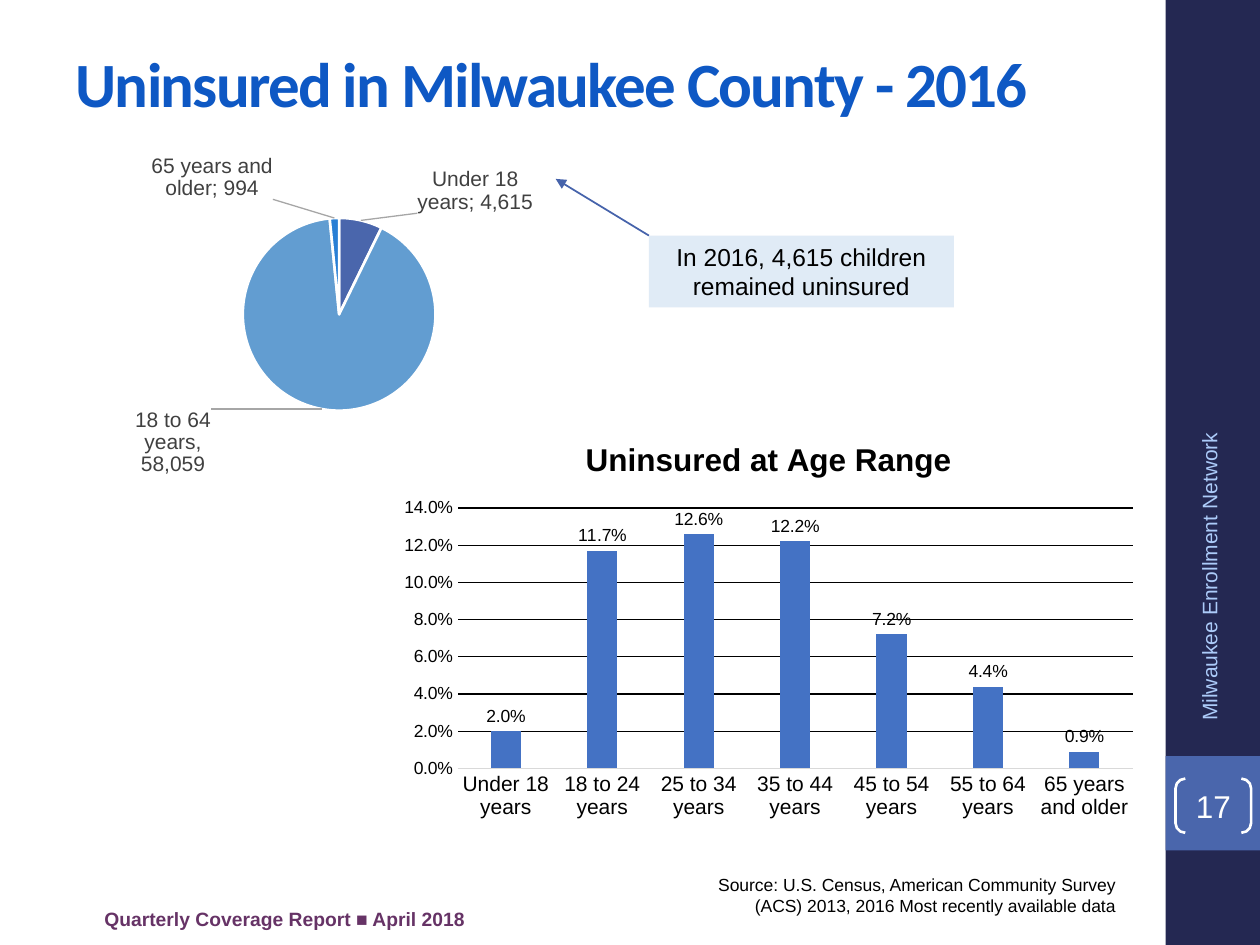
from dataclasses import dataclass

from lxml import etree
from pptx import Presentation
from pptx.chart.data import CategoryChartData
from pptx.dml.color import RGBColor
from pptx.enum.chart import XL_CHART_TYPE, XL_LABEL_POSITION, XL_TICK_MARK
from pptx.enum.shapes import MSO_CONNECTOR, MSO_SHAPE
from pptx.enum.text import MSO_ANCHOR, MSO_AUTO_SIZE, PP_ALIGN
from pptx.oxml import parse_xml
from pptx.oxml.ns import nsdecls, qn
from pptx.util import Inches, Pt

COLUMN, PIE = XL_CHART_TYPE.COLUMN_CLUSTERED, XL_CHART_TYPE.PIE
OUTSIDE, BEST_FIT = XL_LABEL_POSITION.OUTSIDE_END, XL_LABEL_POSITION.BEST_FIT
NO_TICK = XL_TICK_MARK.NONE
RECT, BRACKETS = MSO_SHAPE.RECTANGLE, MSO_SHAPE.DOUBLE_BRACKET
TOP, MIDDLE = MSO_ANCHOR.TOP, MSO_ANCHOR.MIDDLE
LEFT, CENTER, RIGHT = PP_ALIGN.LEFT, PP_ALIGN.CENTER, PP_ALIGN.RIGHT


@dataclass(frozen=True)
class Theme:
    text_font: str = "Arial"
    title_font: str = "Calibri"
    white: str = "FFFFFF"
    black: str = "000000"
    navy: str = "242852"
    indigo: str = "4A66AC"
    title: str = "0E58C4"
    network: str = "ACCBF9"
    callout: str = "E0EBF6"
    arrow: str = "4663AB"
    footer: str = "663366"
    bar: str = "4472C4"
    axis: str = "D9D9D9"
    label: str = "404040"
    leader: str = "A6A6A6"
    slices: tuple = ("4A66AC", "629DD1", "297FD5")
    title_size: int = 36
    heading_size: int = 18
    callout_size: int = 14
    label_size: int = 12
    footer_size: int = 11
    small_size: int = 10


THEME = Theme()
AGE_RATES = {
    "Under 18 years": 0.02,
    "18 to 24 years": 0.117,
    "25 to 34 years": 0.126,
    "35 to 44 years": 0.122,
    "45 to 54 years": 0.072,
    "55 to 64 years": 0.044,
    "65 years and older": 0.009,
}
AGE_COUNTS = {"Under 18 years": 4615, "18 to 64 years": 58059, "65 years and older": 994}
PIE_LABEL_OFFSETS = ((0.09, 0), (-0.18, -0.02), (-0.2, -0.03))


def inches(*lengths):
    return [Inches(length) for length in lengths]


def rgb(color):
    return RGBColor.from_string(color)


def style_font(font, size, color, bold=False, name=THEME.text_font):
    font.name, font.size, font.bold = name, Pt(size), bold
    font.color.rgb = rgb(color)


def write(box, text, size, color, align=LEFT, anchor=TOP, bold=False, name=THEME.text_font):
    frame = box.text_frame
    frame.word_wrap = True
    frame.auto_size = MSO_AUTO_SIZE.NONE
    frame.vertical_anchor = anchor
    para = frame.paragraphs[0]
    para.alignment = align
    span = para.add_run()
    span.text = text
    style_font(span.font, size, color, bold, name)
    return span


def add_text(slide, bounds, *text, **style):
    box = slide.shapes.add_textbox(*inches(*bounds))
    write(box, *text, **style)
    return box


def add_block(slide, bounds, fill):
    block = slide.shapes.add_shape(RECT, *inches(*bounds))
    block.shadow.inherit = False
    block.fill.solid()
    block.fill.fore_color.rgb = rgb(fill)
    block.line.fill.background()
    return block


def add_title(slide, text):
    title = slide.shapes.title
    title.left, title.top, title.width, title.height = inches(0.5, 0.3, 8.08, 1.03)
    span = write(title, text, THEME.title_size, THEME.title, bold=True, name=THEME.title_font)
    span.font._element.set("spc", "-100")


def add_page_number(slide, number):
    badge = slide.shapes.add_shape(BRACKETS, *inches(9.33, 6.18, 0.6, 0.43))
    badge.adjustments[0] = 0.18
    badge.shadow.inherit = False
    badge.fill.background()
    badge.line.color.rgb = rgb(THEME.white)
    badge.line.width = Pt(1.5)
    frame = badge.text_frame
    frame.margin_left = frame.margin_right = frame.margin_top = frame.margin_bottom = 0
    write(badge, number, THEME.heading_size, THEME.white, CENTER, MIDDLE)


def add_arrow(slide, start, end):
    arrow = slide.shapes.add_connector(MSO_CONNECTOR.STRAIGHT, *inches(*start, *end))
    arrow.line.color.rgb = rgb(THEME.arrow)
    arrow.line.width = Pt(1)
    etree.SubElement(arrow.line._get_or_add_ln(), qn("a:tailEnd"), type="triangle")
    etree.SubElement(arrow._element.spPr, qn("a:effectLst"))


def manual_layout(x, y, size=None):
    parts = [("x", x), ("y", y)]
    if size:
        modes = [("layoutTarget", "inner"), ("xMode", "edge"), ("yMode", "edge")]
        parts = modes + parts + list(zip("wh", size))
    body = "".join(f'<c:{tag} val="{value}"/>' for tag, value in parts)
    return parse_xml(f'<c:layout {nsdecls("c")}><c:manualLayout>{body}</c:manualLayout></c:layout>')


def add_chart(slide, kind, bounds, values, number_format, plot_area, fill):
    data = CategoryChartData(number_format=number_format)
    data.categories = values.keys()
    data.add_series("Series 1", values.values())
    chart = slide.shapes.add_chart(kind, *inches(*bounds), data).chart
    style_font(chart.font, THEME.small_size, THEME.black)
    chart.has_legend = False
    chart.has_title = False
    space = chart._chartSpace
    space.find(qn("c:chart")).addnext(
        parse_xml(f'<c:spPr {nsdecls("c", "a")}>{fill}<a:ln><a:noFill/></a:ln></c:spPr>'))
    area = space.find(".//" + qn("c:plotArea"))
    for layout in area.findall(qn("c:layout")):
        area.remove(layout)
    area.insert(0, manual_layout(*plot_area))
    return chart


def add_rate_chart(slide):
    white = f'<a:solidFill><a:srgbClr val="{THEME.white}"/></a:solidFill>'
    chart = add_chart(slide, COLUMN, (3.09, 3.32, 6.02, 3.39), AGE_RATES, "0.0%",
                      (0.09, 0.21, (0.89, 0.61)), white)
    chart.has_title = True
    span = chart.chart_title.text_frame.paragraphs[0].add_run()
    span.text = "Uninsured at Age Range"
    style_font(span.font, THEME.heading_size, THEME.black, True)
    plot = chart.plots[0]
    plot.gap_width, plot.overlap, plot.vary_by_categories = 219, -27, False
    series = plot.series[0]
    series.format.fill.solid()
    series.format.fill.fore_color.rgb = rgb(THEME.bar)
    labels = series.data_labels
    labels.show_value = True
    labels.position = OUTSIDE
    labels.number_format, labels.number_format_is_linked = "0.0%", False
    ages, rates = chart.category_axis, chart.value_axis
    ages.major_tick_mark = rates.major_tick_mark = NO_TICK
    style_font(ages.tick_labels.font, THEME.label_size, THEME.black)
    ages.format.line.color.rgb = rgb(THEME.axis)
    ages.format.line.width = Pt(0.75)
    rates.minimum_scale, rates.maximum_scale, rates.major_unit = 0, 0.14, 0.02
    rates.tick_labels.number_format, rates.tick_labels.number_format_is_linked = "0.0%", False
    rates.format.line.fill.background()
    rates.major_gridlines.format.line.color.rgb = rgb(THEME.black)
    rates.major_gridlines.format.line.width = Pt(0.75)


def add_count_chart(slide):
    chart = add_chart(slide, PIE, (0.32, 0.98, 4.84, 3), AGE_COUNTS, "#,##0",
                      (0.33, 0.25, (0.32, 0.51)), "<a:noFill/>")
    plot = chart.plots[0]
    plot.vary_by_categories = True
    series = plot.series[0]
    labels = series.data_labels
    labels.show_value = labels.show_category_name = True
    labels.position = BEST_FIT
    labels.number_format, labels.number_format_is_linked = "#,##0", False
    style_font(labels.font, THEME.label_size, THEME.label)
    for index, color in enumerate(THEME.slices):
        point = series.points[index]
        point.format.fill.solid()
        point.format.fill.fore_color.rgb = rgb(color)
        point.format.line.color.rgb = rgb(THEME.white)
        point.format.line.width = Pt(1.5)
        if index == 1:
            span = point.data_label.text_frame.paragraphs[0].add_run()
            span.text = "18 to 64 years, 58,059"
            style_font(span.font, THEME.label_size, THEME.label)
        else:
            style_font(point.data_label.font, THEME.label_size, THEME.label)
        point.data_label.position = BEST_FIT
    for label, offset in zip(labels._element.findall(qn("c:dLbl")), PIE_LABEL_OFFSETS):
        label.find(qn("c:idx")).addnext(manual_layout(*offset))
        label.find(qn("c:showCatName")).set("val", "1")
        etree.SubElement(label, qn("c:separator")).text = "; "
    for leader in labels._element.findall(qn("c:showLeaderLines")):
        labels._element.remove(leader)
    etree.SubElement(labels._element, qn("c:separator")).text = "; "
    etree.SubElement(labels._element, qn("c:showLeaderLines"), val="1")
    labels._element.append(parse_xml(
        f'<c:leaderLines {nsdecls("c", "a")}><c:spPr><a:ln w="9525"><a:solidFill>'
        f'<a:srgbClr val="{THEME.leader}"/></a:solidFill></a:ln></c:spPr></c:leaderLines>'))


def main():
    deck = Presentation()
    deck.slide_width, deck.slide_height = inches(10, 7.5)
    slide = deck.slides.add_slide(deck.slide_layouts[5])
    add_block(slide, (9.25, 0, 0.75, 7.5), THEME.navy)
    add_block(slide, (9.25, 6, 0.75, 0.75), THEME.indigo)
    add_rate_chart(slide)
    add_count_chart(slide)
    network = add_text(slide, (8.3, 4.43, 2.59, 0.4), "Milwaukee Enrollment Network",
                       THEME.label_size, THEME.network, align=RIGHT, anchor=MIDDLE)
    network.rotation = 270
    add_page_number(slide, "17")
    add_title(slide, "Uninsured in Milwaukee County - 2016")
    callout = add_block(slide, (5.15, 1.87, 2.42, 0.57), THEME.callout)
    write(callout, "In 2016, 4,615 children remained uninsured",
          THEME.callout_size, THEME.black, CENTER)
    add_arrow(slide, (5.15, 1.87), (4.41, 1.42))
    add_text(slide, (5.37, 6.89, 3.58, 0.44),
             "Source: U.S. Census, American Community Survey (ACS) 2013, 2016 "
             "Most recently available data", THEME.small_size, THEME.black, align=RIGHT)
    add_text(slide, (0.73, 7.09, 4.16, 0.4), "Quarterly Coverage Report ■ April 2018",
             THEME.footer_size, THEME.footer, anchor=MIDDLE, bold=True)
    deck.save("out.pptx")


if __name__ == "__main__":
    main()
